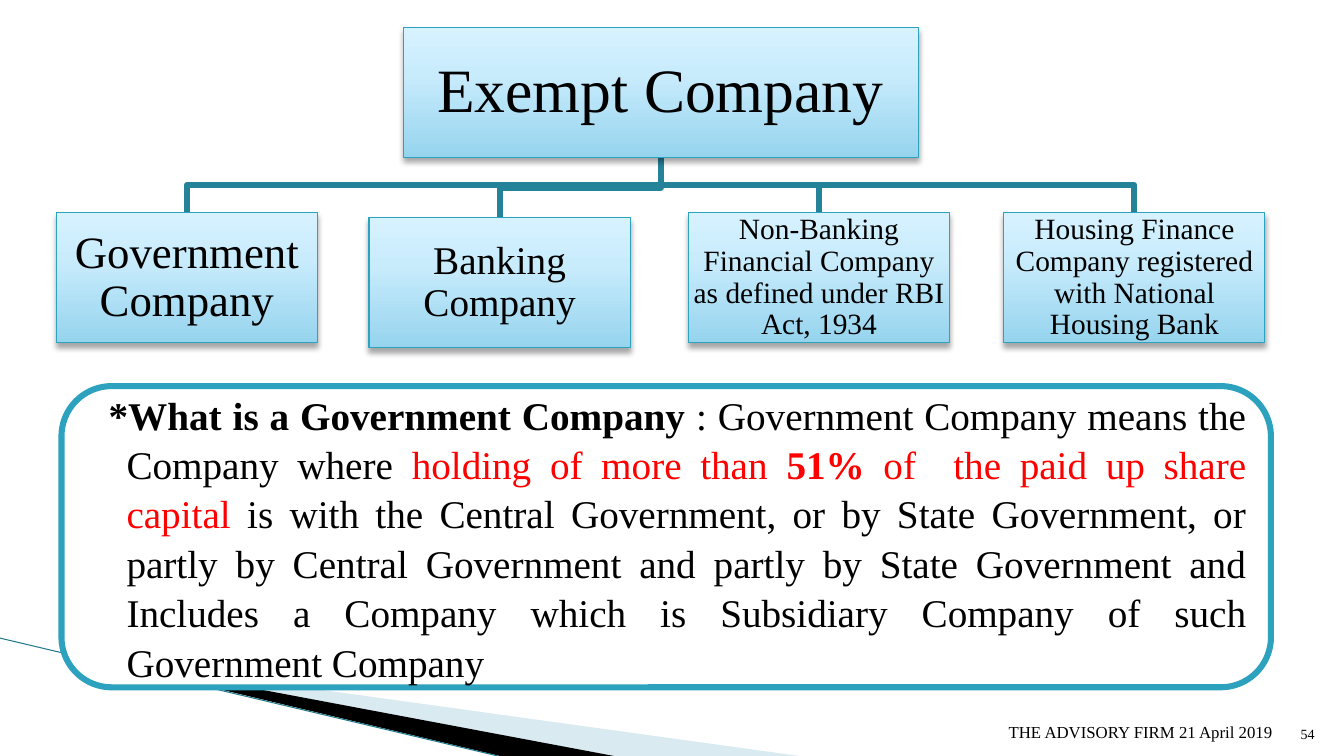
from copy import deepcopy
from dataclasses import dataclass

from lxml.etree import SubElement
from pptx import Presentation
from pptx.dml.color import RGBColor
from pptx.enum.shapes import MSO_CONNECTOR, MSO_SHAPE
from pptx.enum.text import MSO_ANCHOR, PP_ALIGN
from pptx.oxml.ns import qn
from pptx.shapes.autoshape import Shape
from pptx.slide import Slide
from pptx.util import Cm, Pt


@dataclass(frozen=True)
class Theme:
    font: str = "Times New Roman"
    text: str = "000000"
    accent: str = "FF0000"
    panel: str = "FFFFFF"
    border: str = "2DA2BF"
    branch: str = "248299"
    wedge_light: str = "A0CBDC"
    wedge_dark: str = "000000"
    wedge_line: str = "1F7A8C"
    gradient: tuple[tuple[float, str], ...] = (
        (0, "96D4EE"), (0.65, "C9ECFC"), (1, "D7F2FF"))
    title_size: int = 44
    large_size: int = 32
    body_size: int = 28
    small_size: int = 21
    footer_size: int = 12
    number_size: int = 10
    heavy_line: float = 4.33
    thin_line: float = 0.75


@dataclass(frozen=True)
class Span:
    text: str
    size: int
    color: str
    bold: bool = False


@dataclass(frozen=True)
class Node:
    label: str
    left: float
    top: float
    width: float
    size: int
    inset: float
    height: float = 3.28

    @property
    def center(self) -> float:
        return self.left + self.width / 2

    @property
    def bottom(self) -> float:
        return self.top + self.height


@dataclass(frozen=True)
class Caption:
    span: Span
    left: float
    width: float
    align: PP_ALIGN


THEME = Theme()
CHILD_WIDTH = 6.58
ROOT = Node("Exempt Company", 10.16, 0.69, 12.98, THEME.title_size, 0.08)
CHILDREN = (
    Node("Government Company", 1.42, 5.36, CHILD_WIDTH, THEME.large_size, 0.05),
    Node("Banking Company", 9.3, 5.49, CHILD_WIDTH, THEME.body_size, 0.05),
    Node("Non-Banking Financial Company as defined under RBI Act, 1934",
         17.35, 5.36, CHILD_WIDTH, THEME.small_size, 0.03),
    Node("Housing Finance Company registered with National Housing Bank",
         25.3, 5.36, CHILD_WIDTH, THEME.small_size, 0.03),
)
DEFINITION = (
    Span("*What is a Government Company ", THEME.body_size, THEME.text, True),
    Span(": Government Company means the Company where ", THEME.body_size, THEME.text),
    Span("holding of more than ", THEME.body_size, THEME.accent),
    Span("51% ", THEME.body_size, THEME.accent, True),
    Span("of  the paid up share capital ", THEME.body_size, THEME.accent),
    Span("is with the Central Government, or by State Government, or partly by "
         "Central Government and partly by State Government and Includes a Company "
         "which is Subsidiary Company of such Government Company",
         THEME.body_size, THEME.text),
)
CAPTIONS = (
    Caption(Span("54", THEME.number_size, THEME.text), 32.03, 1.35, PP_ALIGN.RIGHT),
    Caption(Span("THE ADVISORY FIRM 21 April 2019", THEME.footer_size, THEME.text),
            25.17, 7.62, PP_ALIGN.LEFT),
)


def write(shape: Shape, spans: tuple[Span, ...], align: PP_ALIGN,
          anchor: MSO_ANCHOR, spacing: float = 1.0) -> None:
    """Fill the single paragraph of a shape run by run."""
    frame = shape.text_frame
    frame.word_wrap = True
    frame.vertical_anchor = anchor
    para = frame.paragraphs[0]
    para.alignment = align
    para.line_spacing = spacing
    for span in spans:
        run = para.add_run()
        run.text = span.text
        run.font.name = THEME.font
        run.font.size = Pt(span.size)
        run.font.bold = span.bold
        run.font.color.rgb = RGBColor.from_string(span.color)


def outline(shape: Shape, color: str, width: float) -> None:
    """Set the line of a shape."""
    shape.line.color.rgb = RGBColor.from_string(color)
    shape.line.width = Pt(width)


def add_path(page: Slide, points: list[tuple[float, float]], close: bool) -> Shape:
    """Draw straight segments through points given in centimetres."""
    start, *rest = [(Cm(x), Cm(y)) for x, y in points]
    builder = page.shapes.build_freeform(*start)
    builder.add_line_segments(rest, close=close)
    shape = builder.convert_to_shape()
    shape.shadow.inherit = False
    return shape


def add_wedge(page: Slide, points: list[tuple[float, float]], color: str,
              opacity: int = 100) -> None:
    """Draw a borderless corner wedge."""
    wedge = add_path(page, points, True)
    wedge.fill.solid()
    wedge.fill.fore_color.rgb = RGBColor.from_string(color)
    wedge.line.fill.background()
    if opacity < 100:
        tint = wedge._element.spPr.find(qn("a:solidFill"))[0]
        SubElement(tint, qn("a:alpha"), val=str(opacity * 1000))


def add_branch(page: Slide, parent: Node, child: Node) -> None:
    """Join a parent to a child with an elbow line."""
    middle = (parent.bottom + child.top) / 2
    branch = add_path(page, [(parent.center, parent.bottom), (parent.center, middle),
                             (child.center, middle), (child.center, child.top)], False)
    branch.fill.background()
    outline(branch, THEME.branch, THEME.heavy_line)


def add_node(page: Slide, node: Node) -> None:
    """Draw a shaded box with its label and a soft shadow."""
    box = page.shapes.add_shape(MSO_SHAPE.RECTANGLE, Cm(node.left), Cm(node.top),
                                Cm(node.width), Cm(node.height))
    box.fill.gradient()
    box.fill.gradient_angle = 90
    stops = box._element.spPr.find(".//" + qn("a:gsLst"))
    stops.append(deepcopy(stops[0]))
    for stop, (position, color) in zip(box.fill.gradient_stops, THEME.gradient):
        stop.position = position
        stop.color.rgb = RGBColor.from_string(color)
    outline(box, THEME.border, THEME.thin_line)
    box.shadow.inherit = False
    shadow = SubElement(box._element.spPr.find(qn("a:effectLst")), qn("a:outerShdw"),
                        blurRad=str(Pt(4)), dist=str(Pt(3)), dir="5400000",
                        rotWithShape="0")
    shade = SubElement(shadow, qn("a:srgbClr"), val=THEME.text)
    SubElement(shade, qn("a:alpha"), val="35000")
    frame = box.text_frame
    frame.margin_left = frame.margin_right = Cm(node.inset)
    frame.margin_top = frame.margin_bottom = Cm(node.inset)
    write(box, (Span(node.label, node.size, THEME.text),), PP_ALIGN.CENTER,
          MSO_ANCHOR.MIDDLE, 0.9)


def add_definition(page: Slide) -> None:
    """Draw the rounded panel with the definition."""
    panel = page.shapes.add_shape(MSO_SHAPE.ROUNDED_RECTANGLE, Cm(1.55), Cm(9.73),
                                  Cm(30.48), Cm(7.59))
    panel.shadow.inherit = False
    panel.fill.solid()
    panel.fill.fore_color.rgb = RGBColor.from_string(THEME.panel)
    outline(panel, THEME.border, THEME.heavy_line)
    write(panel, DEFINITION, PP_ALIGN.JUSTIFY, MSO_ANCHOR.MIDDLE, 1.05)
    properties = panel.text_frame.paragraphs[0]._p.get_or_add_pPr()
    properties.set("marL", str(Cm(1.02)))
    properties.set("indent", str(Cm(-0.45)))


def main() -> None:
    """Build the slide and save the deck."""
    deck = Presentation()
    deck.slide_width, deck.slide_height = Cm(33.87), Cm(19.05)
    page = deck.slides.add_slide(deck.slide_layouts[6])
    add_wedge(page, [(1.85, 16.52), (20.14, 19.05), (15.44, 19.05)],
              THEME.wedge_light, 40)
    add_wedge(page, [(1.8, 16.48), (15.47, 19.05), (12.6, 19.05)], THEME.wedge_dark)
    edge = page.shapes.add_connector(MSO_CONNECTOR.STRAIGHT, Cm(0), Cm(16.08),
                                     Cm(12.55), Cm(19.05))
    outline(edge, THEME.wedge_line, THEME.thin_line)
    SubElement(edge._element.spPr, qn("a:effectLst"))
    add_definition(page)
    for child in reversed(CHILDREN):
        add_branch(page, ROOT, child)
    for node in (ROOT, *CHILDREN):
        add_node(page, node)
    for caption in CAPTIONS:
        box = page.shapes.add_textbox(Cm(caption.left), Cm(17.81),
                                      Cm(caption.width), Cm(1.02))
        write(box, (caption.span,), caption.align, MSO_ANCHOR.BOTTOM)
    deck.save("out.pptx")


if __name__ == "__main__":
    main()
